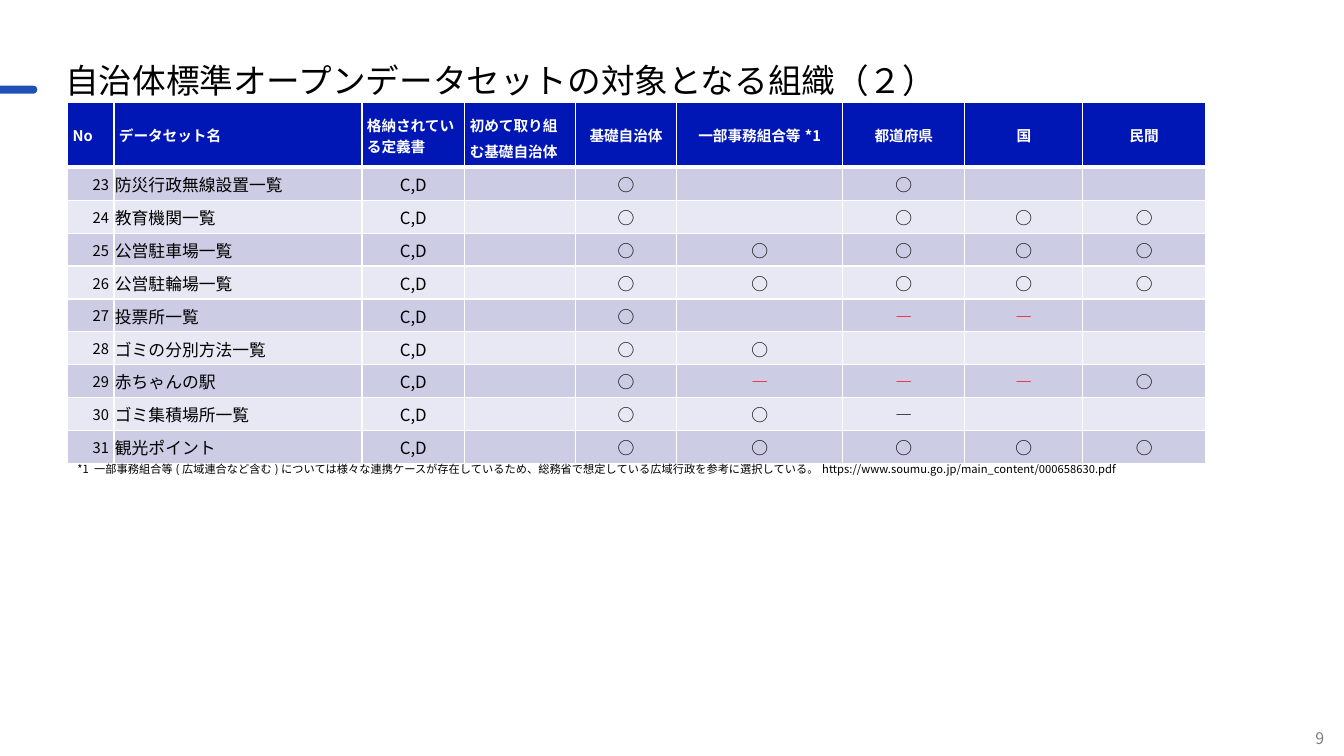
from lxml.etree import SubElement
from pptx import Presentation
from pptx.dml.color import RGBColor
from pptx.enum.shapes import MSO_SHAPE
from pptx.enum.text import MSO_ANCHOR, PP_ALIGN
from pptx.oxml.ns import qn
from pptx.util import Inches, Pt

FONT = "Noto Sans CJK JP"
HEADINGS = ["No", "データセット名", "格納されている定義書", "初めて取り組む基礎自治体",
            "基礎自治体", "一部事務組合等*1", "都道府県", "国", "民間"]
COLUMN_WIDTHS = [0.46, 2.46, 1.02, 1.1, 1, 1.65, 1.21, 1.17, 1.22]
FIRST_NUMBER = 23
DATASETS = [
    ("防災行政無線設置一覧", ["○", "", "○", "", ""]),
    ("教育機関一覧", ["○", "", "○", "○", "○"]),
    ("公営駐車場一覧", ["○", "○", "○", "○", "○"]),
    ("公営駐輪場一覧", ["○", "○", "○", "○", "○"]),
    ("投票所一覧", ["○", "", "―", "―", ""]),
    ("ゴミの分別方法一覧", ["○", "○", "", "", ""]),
    ("赤ちゃんの駅", ["○", "―", "―", "―", "○"]),
    ("ゴミ集積場所一覧", ["○", "○", "―", "", ""]),
    ("観光ポイント", ["○", "○", "○", "○", "○"]),
]
BLACK_DASH_DATASET = "ゴミ集積場所一覧"
HEADING_INSETS = (0.05, 0.06, 0.05, 0.05)
ENTRY_INSETS = (0.01, 0.01, 0.01, 0)


def rgb(value):
    return RGBColor.from_string(value)


def write(frame, text, size=12, color="000000", bold=False,
          align=PP_ALIGN.LEFT, spacing=None):
    paragraph = frame.paragraphs[0]
    paragraph.alignment = align
    paragraph.line_spacing = spacing
    run = paragraph.add_run()
    run.text = text
    run.font.size = Pt(size)
    run.font.bold = bold
    run.font.name = FONT
    run.font.color.rgb = rgb(color)
    SubElement(run.font._element, qn("a:ea"), typeface=FONT)


def add_label(slide, text, left, top, width, height,
              anchor=MSO_ANCHOR.TOP, insets=(0.1, 0.05, 0.1, 0.05), **text_format):
    frame = slide.shapes.add_textbox(
        Inches(left), Inches(top), Inches(width), Inches(height)).text_frame
    frame.word_wrap = True
    frame.vertical_anchor = anchor
    (frame.margin_left, frame.margin_top,
     frame.margin_right, frame.margin_bottom) = map(Inches, insets)
    write(frame, text, **text_format)


def add_accent_bar(slide):
    bar = slide.shapes.add_shape(MSO_SHAPE.ROUNDED_RECTANGLE, Inches(-0.1),
                                 Inches(0.85), Inches(0.47), Inches(0.08))
    bar.adjustments[0] = 0.5
    bar.shadow.inherit = False
    bar.fill.solid()
    bar.fill.fore_color.rgb = rgb("1E50B5")
    bar.line.fill.background()


def set_borders(cell, **widths):
    properties = cell._tc.get_or_add_tcPr()
    for side in "LRTB":
        line = SubElement(properties, qn(f"a:ln{side}"), w=str(Pt(widths.get(side, 1))))
        fill = SubElement(line, qn("a:solidFill"))
        SubElement(fill, qn("a:srgbClr"), val="FFFFFF")


def fill_cell(cell, text, background, insets, borders,
              anchor=MSO_ANCHOR.MIDDLE, **text_format):
    (cell.margin_left, cell.margin_top,
     cell.margin_right, cell.margin_bottom) = map(Inches, insets)
    cell.vertical_anchor = anchor
    set_borders(cell, **borders)
    cell.fill.solid()
    cell.fill.fore_color.rgb = rgb(background)
    write(cell.text_frame, text, **text_format)


def fill_heading_row(table):
    for column, heading in enumerate(HEADINGS):
        fill_cell(table.cell(0, column), heading, "0017B6", HEADING_INSETS, {"B": 3},
                  size=10.5, color="FFFFFF", bold=True,
                  align=PP_ALIGN.CENTER if column >= 4 else PP_ALIGN.LEFT,
                  spacing=1.25 if column == 3 else None)


def fill_dataset_row(table, row, dataset, marks):
    background = "CCCCE5" if row % 2 else "E7E8F3"
    borders = {"T": 3} if row == 1 else {}
    fill_cell(table.cell(row, 0), str(FIRST_NUMBER + row - 1), background,
              HEADING_INSETS, borders, anchor=MSO_ANCHOR.TOP, size=10.5,
              align=PP_ALIGN.RIGHT)
    fill_cell(table.cell(row, 1), dataset, background, ENTRY_INSETS, borders)
    for column, mark in enumerate(["C,D", "", *marks], start=2):
        is_red = mark == "―" and dataset != BLACK_DASH_DATASET
        fill_cell(table.cell(row, column), mark, background, ENTRY_INSETS, borders,
                  color="FF0000" if is_red else "000000", align=PP_ALIGN.CENTER)


def add_dataset_table(slide):
    table = slide.shapes.add_table(
        len(DATASETS) + 1, len(HEADINGS), Inches(0.67), Inches(1.02),
        Inches(sum(COLUMN_WIDTHS)), Inches(3.58)).table
    for column, width in zip(table.columns, COLUMN_WIDTHS):
        column.width = Inches(width)
    for row in table.rows:
        row.height = Inches(2.94 / len(DATASETS))
    table.rows[0].height = Inches(0.64)
    fill_heading_row(table)
    for row, (dataset, marks) in enumerate(DATASETS, start=1):
        fill_dataset_row(table, row, dataset, marks)


def main():
    presentation = Presentation()
    presentation.slide_width = Inches(13.33)
    presentation.slide_height = Inches(7.5)
    slide = presentation.slides.add_slide(presentation.slide_layouts[6])
    add_accent_bar(slide)
    add_label(slide, "9", 12.89, 7.21, 0.4, 0.23, anchor=MSO_ANCHOR.MIDDLE,
              insets=(0, 0, 0, 0), size=11.4, color="808080", align=PP_ALIGN.CENTER)
    add_label(slide, "自治体標準オープンデータセットの対象となる組織（２）",
              0.55, 0.55, 10.84, 0.5, anchor=MSO_ANCHOR.BOTTOM, size=24, spacing=0.9)
    add_dataset_table(slide)
    add_label(slide, "*1 一部事務組合等(広域連合など含む)については様々な連携ケースが存在しているため、"
              "総務省で想定している広域行政を参考に選択している。"
              "https://www.soumu.go.jp/main_content/000658630.pdf",
              0.67, 4.54, 10.54, 0.24, size=8)
    presentation.save("out.pptx")


if __name__ == "__main__":
    main()
